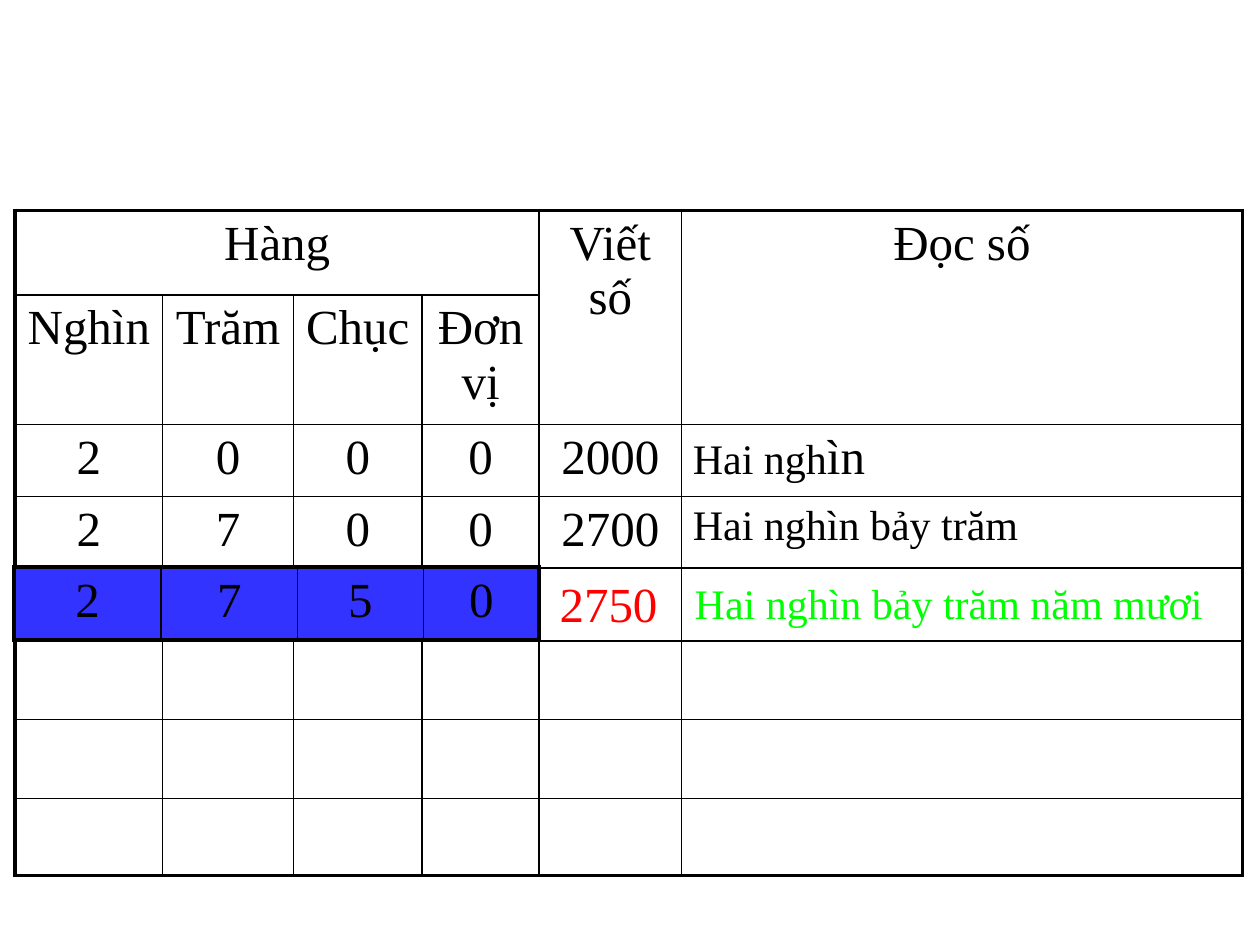
from dataclasses import dataclass

import pptx
import pptx.dml.color
import pptx.enum.shapes
import pptx.enum.text
import pptx.oxml
import pptx.oxml.ns
import pptx.util
from pptx.util import Inches

RGB = pptx.dml.color.RGBColor.from_string
ALIGN = pptx.enum.text.PP_ALIGN


@dataclass(frozen=True)
class Theme:
    font: str = "Times New Roman"
    ink: str = "000000"
    paper: str = "FFFFFF"
    highlight: str = "3333FF"
    number: str = "FF0000"
    reading: str = "00FF00"
    large: float = 28
    medium: float = 24
    thin: float = 1
    thick: float = 2.25


THEME = Theme()

PLACE_ROWS = [
    ["Hàng", "", "", "", "Viết số", "Đọc số"],
    ["Nghìn", "Trăm", "Chục", "Đơn vị", "", ""],
    ["2", "0", "0", "0", "2000", ""],
    ["2", "7", "0", "0", "2700", "Hai nghìn bảy trăm"],
] + [[""] * 6 for _ in range(4)]


def style_paragraph(p, size, color=THEME.ink, align=ALIGN.CENTER):
    p.alignment = align
    p.font.name = THEME.font
    p.font.size = pptx.util.Pt(size)
    p.font.color.rgb = RGB(color)


def set_borders(cell, widths):
    """Draw the left, right, top and bottom borders, in points."""
    tcPr = cell._tc.get_or_add_tcPr()
    for side, width in zip("LRTB", widths):
        tcPr.append(pptx.oxml.parse_xml(
            f'<a:ln{side} {pptx.oxml.ns.nsdecls("a")} w="{pptx.util.Pt(width)}">'
            f'<a:solidFill><a:srgbClr val="{THEME.ink}"/></a:solidFill>'
            f'</a:ln{side}>'))


def add_grid(s, left, top, widths, heights, rows, fill=None):
    """Add a table with thin inner lines and a thick outer frame."""
    n_rows, n_cols = len(heights), len(widths)
    table = s.shapes.add_table(n_rows, n_cols, Inches(left), Inches(top),
                               Inches(sum(widths)), Inches(sum(heights))).table
    table.first_row = table.horz_banding = False
    for column, width in zip(table.columns, widths):
        column.width = Inches(width)
    for row, height in zip(table.rows, heights):
        row.height = Inches(height)
    for i, texts in enumerate(rows):
        for j, text in enumerate(texts):
            cell = table.cell(i, j)
            cell.margin_left = cell.margin_right = Inches(0.09)
            outer = (j == 0, j == n_cols - 1, i == 0, i == n_rows - 1)
            set_borders(cell, [THEME.thick if o else THEME.thin for o in outer])
            if fill:
                cell.fill.solid()
                cell.fill.fore_color.rgb = RGB(fill)
            else:
                cell.fill.background()
            cell.text = text
            style_paragraph(cell.text_frame.paragraphs[0], THEME.large)
    return table


def add_place_value_table(s):
    table = add_grid(s, 0.12, 1.67, [1.17, 1.04, 1.02, 0.93, 1.13, 4.45],
                     [0.67, 1.03, 0.57, 0.57, 0.58, 0.62, 0.63, 0.61], PLACE_ROWS)
    table.cell(0, 0).merge(table.cell(0, 3))
    for j in (4, 5):
        table.cell(0, j).merge(table.cell(1, j))

    for i in (2, 3):
        p = table.cell(i, 5).text_frame.paragraphs[0]
        style_paragraph(p, THEME.medium, align=ALIGN.LEFT)
    p = table.cell(2, 5).text_frame.paragraphs[0]
    for text, size in (("Hai ngh", THEME.medium), ("ìn", THEME.large)):
        r = p.add_run()
        r.text = text
        r.font.size = pptx.util.Pt(size)


def add_answer(s, left, width, text, size, color):
    sp = s.shapes.add_shape(pptx.enum.shapes.MSO_SHAPE.RECTANGLE, Inches(left),
                            Inches(4.62), Inches(width), Inches(0.33))
    sp.shadow.inherit = False
    sp.fill.solid()
    sp.fill.fore_color.rgb = RGB(THEME.paper)
    sp.line.color.rgb = RGB(THEME.paper)
    sp.line.width = pptx.util.Pt(0.75)
    tf = sp.text_frame
    tf.word_wrap = False
    tf.vertical_anchor = pptx.enum.text.MSO_ANCHOR.MIDDLE
    tf.text = text
    style_paragraph(tf.paragraphs[0], size, color)


def main():
    prs = pptx.Presentation()
    prs.slide_width, prs.slide_height = Inches(10), Inches(7.5)
    s = prs.slides.add_slide(prs.slide_layouts[6])
    add_place_value_table(s)
    add_grid(s, 0.11, 4.5, [1.17, 1.08, 1, 0.92], [0.58],
             [["2", "7", "5", "0"]], THEME.highlight)
    add_answer(s, 4.33, 1, "2750", THEME.large, THEME.number)
    add_answer(s, 6.58, 1.9, "Hai nghìn bảy trăm năm mươi",
               THEME.medium, THEME.reading)
    prs.save("out.pptx")


if __name__ == "__main__":
    main()
